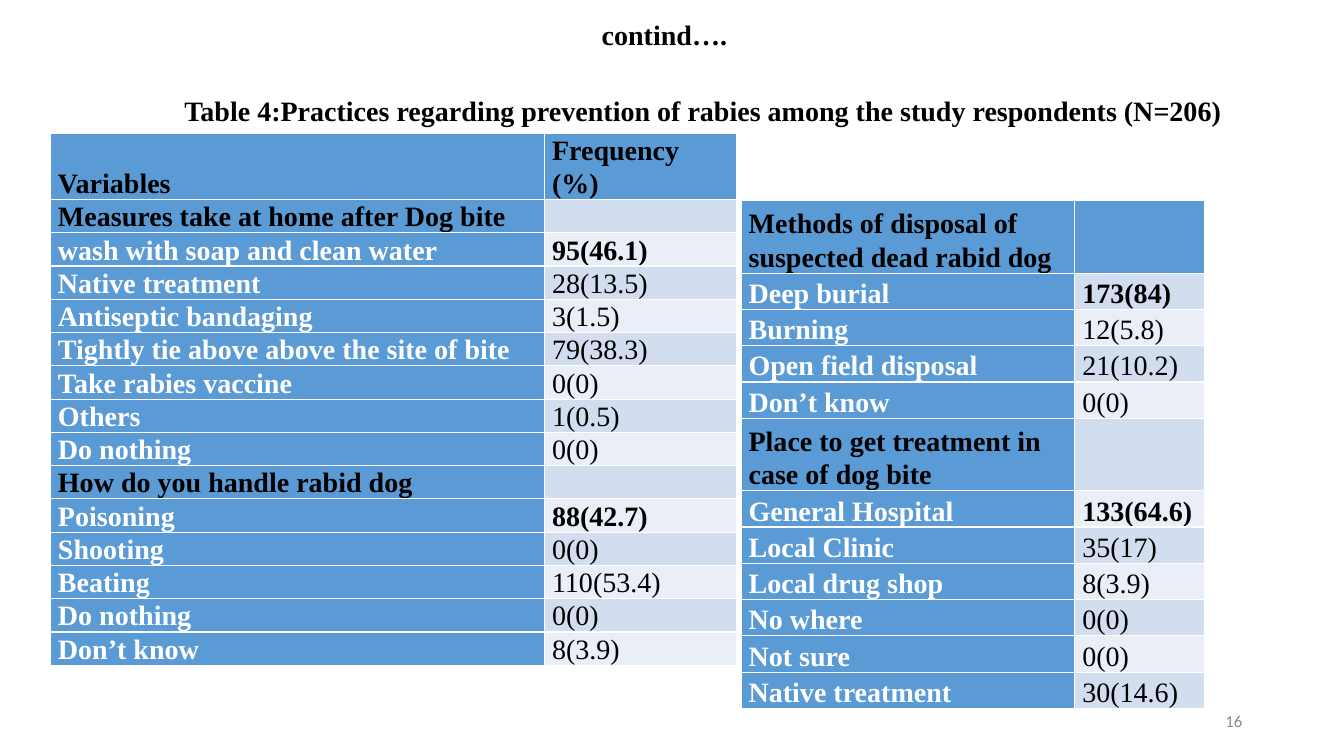
"""Build the slide on rabies prevention practices, with two frequency tables."""
from pptx import Presentation, util as u
from pptx.dml.color import RGBColor
from pptx.enum import text

BLACK = RGBColor(0, 0, 0)
WHITE = RGBColor(255, 255, 255)
GRAY = RGBColor(0x8C, 0x8C, 0x8C)
BLUE = RGBColor(0x5B, 0x9B, 0xD5)
BANDS = [RGBColor(0xEA, 0xEF, 0xF7), RGBColor(0xD2, 0xDE, 0xEF)]
SERIF = "Times New Roman"

HOME_AND_HANDLING = [
    ("Variables", "Frequency (%)"),
    ("Measures take at home after Dog bite", ""),
    ("wash with soap and clean water", "95(46.1)"),
    ("Native treatment", "28(13.5)"),
    ("Antiseptic bandaging", "3(1.5)"),
    ("Tightly tie above above the site of bite", "79(38.3)"),
    ("Take rabies vaccine", "0(0)"),
    ("Others", "1(0.5)"),
    ("Do nothing", "0(0)"),
    ("How do you handle rabid dog", ""),
    ("Poisoning", "88(42.7)"),
    ("Shooting", "0(0)"),
    ("Beating", "110(53.4)"),
    ("Do nothing", "0(0)"),
    ("Don’t know", "8(3.9)"),
]
DISPOSAL_AND_TREATMENT = [
    ("Methods of disposal of suspected dead rabid dog", ""),
    ("Deep burial", "173(84)"),
    ("Burning", "12(5.8)"),
    ("Open field disposal", "21(10.2)"),
    ("Don’t know", "0(0)"),
    ("Place to get treatment in case of dog bite", ""),
    ("General Hospital", "133(64.6)"),
    ("Local Clinic", "35(17)"),
    ("Local drug shop", "8(3.9)"),
    ("No where", "0(0)"),
    ("Not sure", "0(0)"),
    ("Native treatment", "30(14.6)"),
]
TABLES = [
    (HOME_AND_HANDLING, 0.5, 1.32, (4.9, 1.91), 0.33, (0,)),
    (DISPOSAL_AND_TREATMENT, 7.35, 1.99, (3.31, 1.29), 0.36, (0, 5)),
]


def add_run(p, words, size=20, color=BLACK, bold=True, name=SERIF):
    r = p.add_run()
    r.text = words
    r.font.size, r.font.bold, r.font.name = u.Pt(size), bold, name
    r.font.color.rgb = color


def add_text(left, top, width, height):
    tf = s.shapes.add_textbox(*map(u.Inches, (left, top, width, height))).text_frame
    tf.word_wrap = True
    return tf


prs = Presentation()
prs.slide_width, prs.slide_height = u.Inches(13.33), u.Inches(7.5)
s = prs.slides.add_slide(prs.slide_layouts[5])

title = s.shapes.title
title.left, title.top = u.Inches(0.84), 0
title.width, title.height = u.Inches(11.5), u.Inches(0.72)
title.text_frame.vertical_anchor = text.MSO_ANCHOR.MIDDLE
p = title.text_frame.paragraphs[0]
p.alignment, p.line_spacing = text.PP_ALIGN.CENTER, 0.9
add_run(p, "contind….")

for rows, left, top, widths, step, double_rows in TABLES:
    heights = [step * (2 if i in double_rows else 1) for i in range(len(rows))]
    frame = s.shapes.add_table(len(rows), len(widths), *map(
        u.Inches, (left, top, sum(widths), sum(heights))))
    table = frame.table
    for column, width in zip(table.columns, widths):
        column.width = u.Inches(width)
    after_heading = True
    for i, row in enumerate(rows):
        table.rows[i].height = u.Inches(heights[i])
        heading = i == 0 or not row[1]
        for j, words in enumerate(row):
            cell = table.cell(i, j)
            cell.fill.solid()
            cell.fill.fore_color.rgb = BLUE if i == 0 or j == 0 else BANDS[i % 2]
            cell.vertical_anchor = text.MSO_ANCHOR.BOTTOM
            cell.margin_left = cell.margin_right = u.Pt(5.4)
            cell.margin_top = cell.margin_bottom = 0
            p = cell.text_frame.paragraphs[0]
            p.line_spacing = 1.07
            if words:
                add_run(p, words, color=BLACK if heading or j else WHITE,
                        bold=j == 0 or after_heading)
        after_heading = heading

tf = add_text(1.73, 0.88, 10.6, 0.44)
tf.auto_size = text.MSO_AUTO_SIZE.SHAPE_TO_FIT_TEXT
add_run(tf.paragraphs[0], "Table 4:Practices regarding prevention of rabies "
        "among the study respondents (N=206)")

tf = add_text(9.42, 6.95, 3, 0.4)
tf.vertical_anchor = text.MSO_ANCHOR.MIDDLE
tf.paragraphs[0].alignment = text.PP_ALIGN.RIGHT
add_run(tf.paragraphs[0], "16", 12, GRAY, False, "Calibri")

prs.save("out.pptx")
